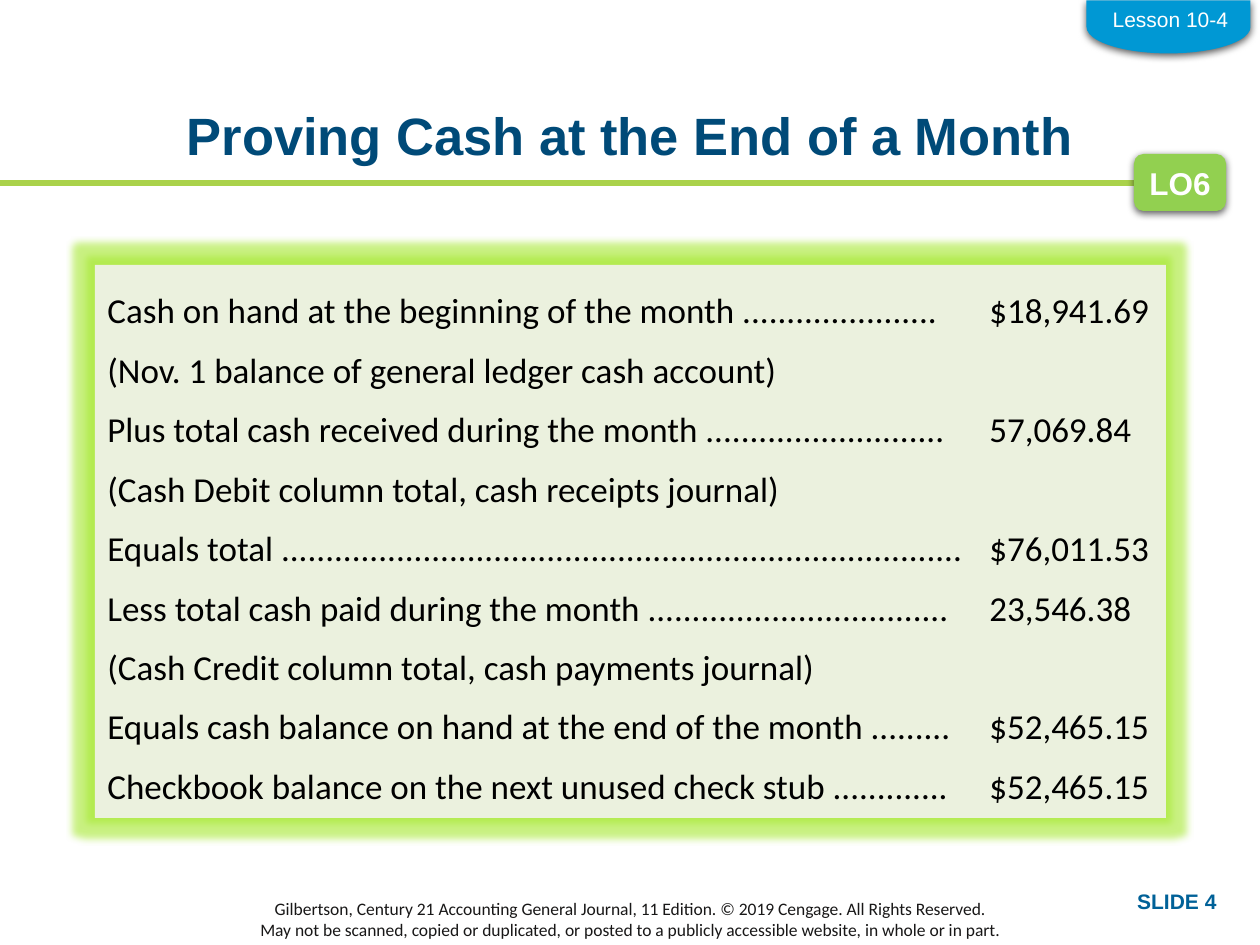
from lxml import etree
from pptx import Presentation
from pptx.dml.color import RGBColor
from pptx.enum.shapes import MSO_CONNECTOR, MSO_SHAPE
from pptx.enum.text import MSO_ANCHOR, PP_ALIGN
from pptx.oxml.ns import qn
from pptx.util import Emu, Pt

LEFT, CENTER, RIGHT = PP_ALIGN.LEFT, PP_ALIGN.CENTER, PP_ALIGN.RIGHT
TOP, MIDDLE = MSO_ANCHOR.TOP, MSO_ANCHOR.MIDDLE
EMU_PER_PX = 914400 / 126
TITLE_ONLY = 5

COLORS = {
    "rule": "AAD24B", "footer": "181717", "title": "004A78", "panel": "EBF1DE",
    "glow": "A5E82F", "body": "000000", "number": "006198", "badge": "92D050",
    "tab": "0098D4", "white": "FFFFFF", "shadow": "000000",
}

CASH_PROOF = [
    "Cash on hand at the beginning of the month ...................... \t$18,941.69",
    "(Nov. 1 balance of general ledger cash account)",
    "Plus total cash received during the month ........................... \t57,069.84"
    "\v(Cash Debit column total, cash receipts journal)",
    "Equals total " + "." * 77 + " \t$76,011.53",
    "Less total cash paid during the month .................................. \t23,546.38",
    "(Cash Credit column total, cash payments journal)",
    "Equals cash balance on hand at the end of the month ......... \t$52,465.15",
    "Checkbook balance on the next unused check stub ............. \t$52,465.15",
]
FOOTER = [
    "Gilbertson, Century 21 Accounting General Journal, 11 Edition. "
    "© 2019 Cengage. All Rights Reserved.",
    "May not be scanned, copied or duplicated, or posted to a publicly "
    "accessible website, in whole or in part.",
]


def px(value):
    return Emu(round(value * EMU_PER_PX))


def box(*lengths):
    return [px(length) for length in lengths]


def rgb(name):
    return RGBColor.from_string(COLORS[name])


def write(shape, lines, size, color, font="Arial", bold=False, align=LEFT,
          anchor=TOP, wrap=True, spacing=None, tab_stop=None):
    frame = shape.text_frame
    frame.word_wrap = wrap
    frame.vertical_anchor = anchor
    for index, line in enumerate(lines):
        paragraph = frame.add_paragraph() if index else frame.paragraphs[0]
        paragraph.text = line
        paragraph.alignment = align
        if spacing:
            paragraph.line_spacing = spacing
        if tab_stop:
            tabs = etree.SubElement(paragraph._p.get_or_add_pPr(), qn("a:tabLst"))
            etree.SubElement(tabs, qn("a:tab"), pos=str(px(tab_stop)), algn="l")
        paragraph.font.name = font
        paragraph.font.size = Pt(size)
        paragraph.font.bold = bold
        paragraph.font.color.rgb = rgb(color)


def add_effect(shape, kind, color, alpha, **settings):
    shape.shadow.inherit = False
    effects = shape._element.spPr.find(qn("a:effectLst"))
    effect = etree.SubElement(effects, qn(f"a:{kind}"), **settings)
    tint = etree.SubElement(effect, qn("a:srgbClr"), val=COLORS[color])
    etree.SubElement(tint, qn("a:alpha"), val=str(alpha * 1000))


def add_drop_shadow(shape):
    add_effect(shape, "outerShdw", "shadow", 63, blurRad=str(Pt(4.5)),
               dist=str(Pt(1.5)), dir="5400000", rotWithShape="0")


def add_filled(slide, kind, bounds, fill):
    shape = slide.shapes.add_shape(kind, *box(*bounds))
    shape.fill.solid()
    shape.fill.fore_color.rgb = rgb(fill)
    shape.line.fill.background()
    return shape


def add_text(slide, bounds, lines, size, color, **style):
    write(slide.shapes.add_textbox(*box(*bounds)), lines, size, color, **style)


def add_title(slide, text):
    title = slide.shapes.title
    title.left, title.top, title.width, title.height = box(87, 110, 1086, 65)
    frame = title.text_frame
    frame.margin_left = frame.margin_right = frame.margin_top = frame.margin_bottom = 0
    write(title, [text], 30, "title", bold=True, align=CENTER, spacing=0.9)


def add_rule(slide):
    rule = slide.shapes.add_connector(MSO_CONNECTOR.STRAIGHT, *box(0, 183, 1197, 183))
    rule.line.color.rgb = rgb("rule")
    rule.line.width = Pt(3)
    etree.SubElement(rule._element.spPr, qn("a:effectLst"))


def main():
    prs = Presentation()
    prs.slide_width, prs.slide_height = box(1260, 945)
    slide = prs.slides.add_slide(prs.slide_layouts[TITLE_ONLY])

    # Heading and footer
    add_rule(slide)
    add_text(slide, (0, 900, 1260, 38), FOOTER, 10, "footer", font="Calibri",
             align=CENTER, anchor=MIDDLE)
    add_title(slide, "Proving Cash at the End of a Month")

    # Cash proof panel
    panel = add_filled(slide, MSO_SHAPE.RECTANGLE, (95, 265, 1071, 553), "panel")
    add_effect(panel, "glow", "glow", 60, rad=str(Pt(8)))
    write(panel, CASH_PROOF, 20, "body", font="Calibri", spacing=Pt(34), tab_stop=882)

    # Slide number
    add_text(slide, (977, 882, 252, 38), ["SLIDE 4"], 12, "number", bold=True, align=RIGHT)

    # Learning objective badge
    badge = add_filled(slide, MSO_SHAPE.ROUNDED_RECTANGLE, (1134, 154, 92, 57), "badge")
    add_drop_shadow(badge)
    write(badge, ["LO6"], 18, "white", bold=True, align=CENTER, anchor=MIDDLE, wrap=False)

    # Lesson tab hanging from the top edge
    lesson_tab = add_filled(slide, MSO_SHAPE.FLOWCHART_DELAY, (1142, -55, 53, 164), "tab")
    lesson_tab.rotation = 90
    add_drop_shadow(lesson_tab)
    add_text(slide, (1100, 0, 141, 38), ["Lesson 10-4"], 12, "white", align=CENTER, wrap=False)

    prs.save("out.pptx")


if __name__ == "__main__":
    main()
